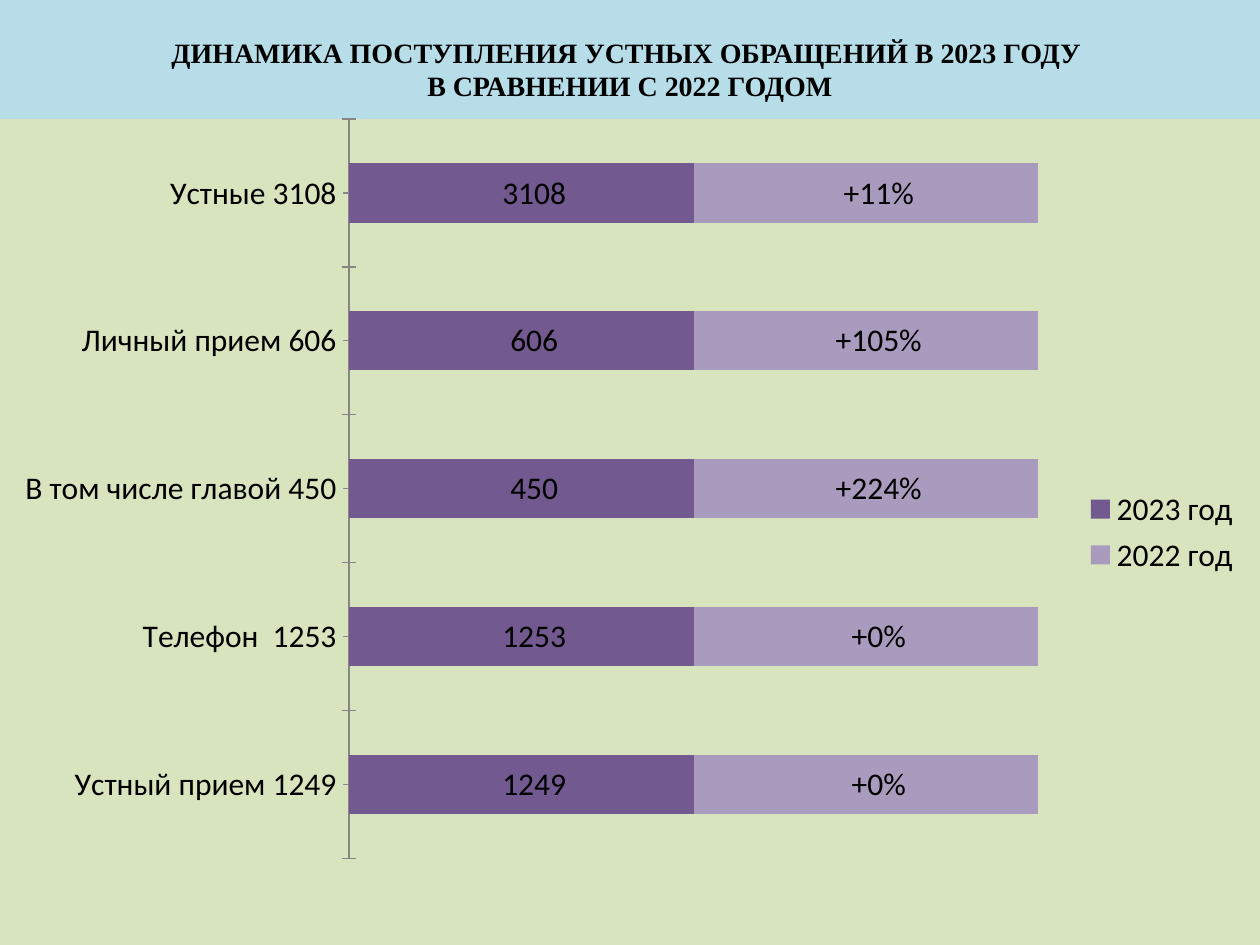
from lxml import etree
from pptx import Presentation
from pptx.chart.data import CategoryChartData
from pptx.dml.color import RGBColor
from pptx.enum.chart import XL_CHART_TYPE as ChartType
from pptx.enum.chart import XL_LABEL_POSITION as LabelPosition
from pptx.enum.chart import XL_LEGEND_POSITION as LegendPosition
from pptx.enum.chart import XL_TICK_MARK as TickMark
from pptx.enum.shapes import MSO_SHAPE as Shape
from pptx.enum.text import MSO_ANCHOR as Anchor
from pptx.enum.text import PP_ALIGN as Align
from pptx.oxml import parse_xml
from pptx.oxml.ns import nsdecls, qn
from pptx.util import Inches, Pt

SKY = RGBColor(0xB7, 0xDE, 0xE8)
OLIVE = RGBColor(0xD7, 0xE4, 0xBD)
PURPLE = RGBColor(0x72, 0x59, 0x90)
LILAC = RGBColor(0xA9, 0x9B, 0xBD)
GRAY = RGBColor(0x86, 0x86, 0x86)
BLACK = RGBColor(0, 0, 0)

TITLE_FONT = {"name": "Times New Roman", "size": Pt(16), "bold": True}
CHART_FONT = {"name": "Calibri", "size": Pt(18), "bold": False}
LABEL_CONTENT = {"show_legend_key": True, "show_value": True, "show_percentage": True,
                 "show_category_name": True, "show_series_name": True}

TITLE = "ДИНАМИКА ПОСТУПЛЕНИЯ УСТНЫХ ОБРАЩЕНИЙ В 2023 ГОДУ \vВ СРАВНЕНИИ С 2022 ГОДОМ"
CATEGORIES = ["Устный прием 1249", "Телефон  1253", "В том числе главой 450",
              "Личный прием 606", "Устные 3108"]
EQUAL_SHARE = 1000
SERIES = [
    ("2023 год ", PURPLE, ["1249", "1253", "450", "606", "3108"]),
    ("2022 год", LILAC, ["+0%", "+0%", "+224%", "+105%", "+11%"]),
]

# Shares of the chart box: left, top, width, height
PLOT_BOX = (0.277, 0, 0.547, 0.895)
LEGEND_BOX = (0.86, 0.44, 0.13, 0.12)


def style_font(font, settings):
    for name, value in settings.items():
        setattr(font, name, value)
    font.color.rgb = BLACK


def layout_xml(box, target=""):
    left, top, width, height = box
    return parse_xml(
        f'<c:layout {nsdecls("c")}><c:manualLayout>{target}'
        '<c:xMode val="edge"/><c:yMode val="edge"/>'
        f'<c:x val="{left}"/><c:y val="{top}"/>'
        f'<c:w val="{width}"/><c:h val="{height}"/>'
        '</c:manualLayout></c:layout>')


def add_title(slide, box):
    band = slide.shapes.add_shape(Shape.RECTANGLE, *box)
    band.shadow.inherit = False
    band.fill.solid()
    band.fill.fore_color.rgb = SKY
    band.line.fill.background()
    frame = band.text_frame
    frame.word_wrap = True
    frame.vertical_anchor = Anchor.MIDDLE
    frame.text = TITLE
    paragraph = frame.paragraphs[0]
    paragraph.alignment = Align.CENTER
    for run in paragraph.runs:
        style_font(run.font, TITLE_FONT)


def style_series(series, color, labels):
    series.format.fill.solid()
    series.format.fill.fore_color.rgb = color
    for index, text in enumerate(labels):
        label = series.points[index].data_label
        label.text_frame.text = text
        style_font(label.text_frame.paragraphs[0].runs[0].font, CHART_FONT)
        label.position = LabelPosition.CENTER
    for name, value in LABEL_CONTENT.items():
        setattr(series.data_labels, name, value)
    for legend_key in series.data_labels._element.iter(qn("c:showLegendKey")):
        legend_key.set("val", "1")


def style_axes(chart):
    chart.value_axis.visible = False
    chart.value_axis.has_major_gridlines = False
    axis = chart.category_axis
    axis.major_tick_mark = TickMark.CROSS
    axis.minor_tick_mark = TickMark.OUTSIDE
    axis.format.line.color.rgb = GRAY
    axis.format.line.width = Pt(0)


def place_legend(chart):
    chart.has_legend = True
    legend = chart.legend
    legend.position = LegendPosition.RIGHT
    legend.include_in_layout = True
    style_font(legend.font, CHART_FONT)
    element = legend._element
    for layout in element.findall(qn("c:layout")):
        element.remove(layout)
    element.find(qn("c:legendPos")).addnext(layout_xml(LEGEND_BOX))


def place_plot(chart):
    area = chart._chartSpace.chart.plotArea
    for layout in area.findall(qn("c:layout")):
        area.remove(layout)
    area.insert(0, layout_xml(PLOT_BOX, '<c:layoutTarget val="inner"/>'))


def fill_background(chart, color):
    properties = parse_xml(f'<c:spPr {nsdecls("c", "a")}/>')
    fill = etree.SubElement(properties, qn("a:solidFill"))
    etree.SubElement(fill, qn("a:srgbClr"), val=str(color))
    line = etree.SubElement(properties, qn("a:ln"))
    etree.SubElement(line, qn("a:noFill"))
    chart._chartSpace.chart.addnext(properties)


def add_appeals_chart(slide, box):
    data = CategoryChartData()
    data.categories = CATEGORIES
    for name, _, labels in SERIES:
        data.add_series(name, [EQUAL_SHARE] * len(labels))
    chart = slide.shapes.add_chart(ChartType.BAR_STACKED_100, *box, data).chart
    chart.has_title = False
    style_font(chart.font, CHART_FONT)
    plot = chart.plots[0]
    plot.vary_by_categories = False
    plot.gap_width = 150
    plot.overlap = 100
    for series, (_, color, labels) in zip(plot.series, SERIES):
        style_series(series, color, labels)
    style_axes(chart)
    place_legend(chart)
    place_plot(chart)
    fill_background(chart, OLIVE)


def main():
    presentation = Presentation()
    presentation.slide_width = width = Inches(10)
    presentation.slide_height = height = Inches(7.5)
    slide = presentation.slides.add_slide(presentation.slide_layouts[6])
    chart_top = Inches(0.94)
    add_title(slide, (0, 0, width, Inches(1.09)))
    add_appeals_chart(slide, (0, chart_top, width, height - chart_top))
    presentation.save("out.pptx")


if __name__ == "__main__":
    main()
